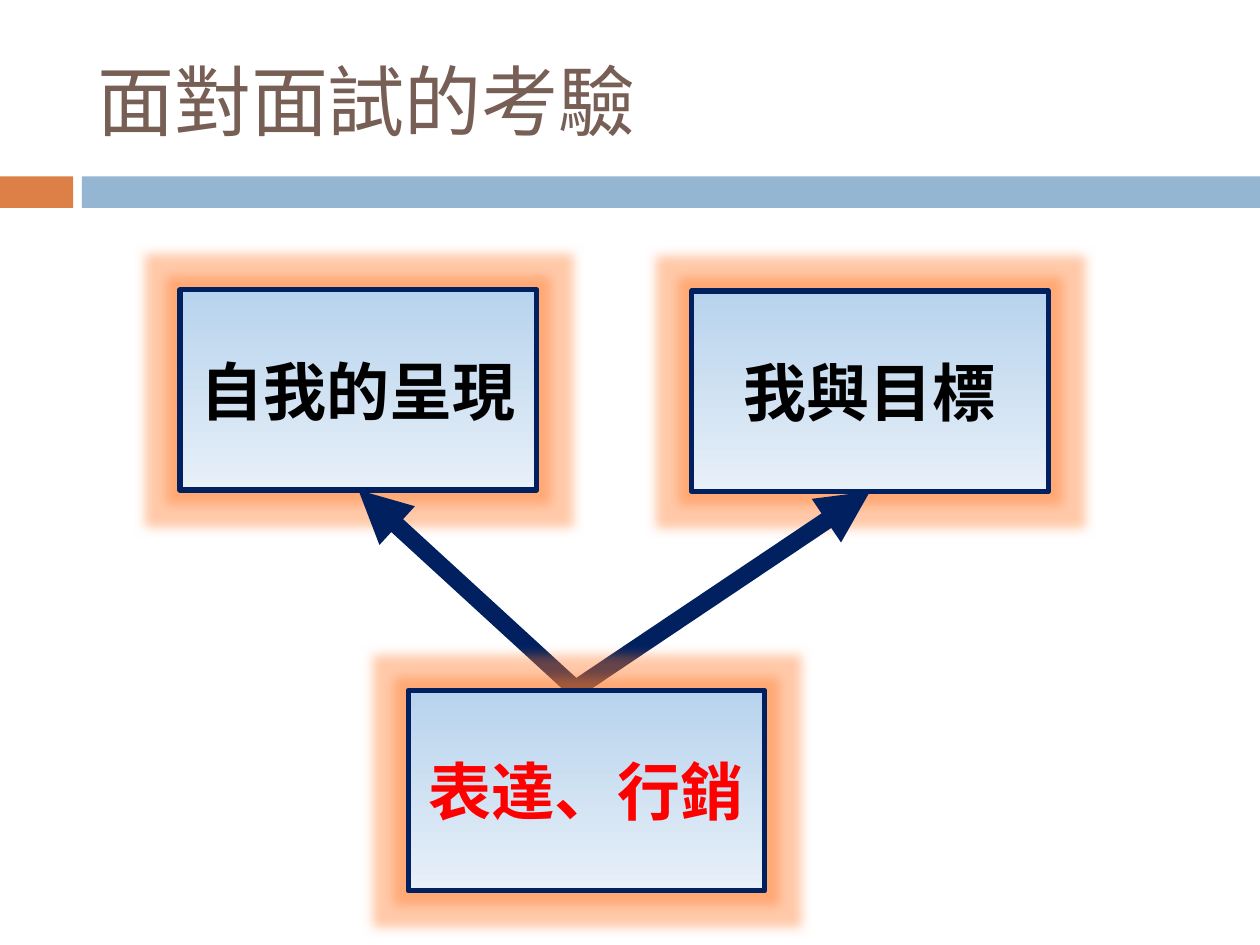
from lxml import etree
from pptx import Presentation
from pptx.dml.color import RGBColor
from pptx.enum.shapes import MSO_CONNECTOR, MSO_SHAPE
from pptx.enum.text import MSO_ANCHOR, MSO_AUTO_SIZE, PP_ALIGN
from pptx.oxml.ns import qn
from pptx.util import Inches, Pt

RECT = MSO_SHAPE.RECTANGLE
LINE = MSO_CONNECTOR.STRAIGHT
MIDDLE = MSO_ANCHOR.MIDDLE
LEFT, CENTER = PP_ALIGN.LEFT, PP_ALIGN.CENTER
NO_FIT = MSO_AUTO_SIZE.NONE
BOTTOM = 2

COLORS = {
    "orange": "DD8047", "blue": "94B6D2", "brown": "775F55",
    "navy": "002060", "top": "B7D3ED", "base": "E8F0F8",
    "glow": "FF7A28", "black": "000000", "red": "FF0000",
}
FORMATS = {
    "title": {"name": "Cabin", "size": Pt(44), "bold": False},
    "box": {"name": "Cabin", "size": Pt(36), "bold": True},
}
BOX_W, BOX_H = 28.3, 15.9
BAND_Y, BAND_H = 14, 2.5


def rgb(name):
    return RGBColor.from_string(COLORS[name])


class Deck:
    """Style and current slide; lengths are cells of a 100 by 75 grid."""

    def __init__(self):
        self.prs = Presentation()
        self.prs.slide_width, self.prs.slide_height = Inches(10), Inches(7.5)
        self.cell = self.prs.slide_width / 100
        self.slide = self.prs.slides.add_slide(self.prs.slide_layouts[5])

    def grid(self, *cells):
        return [round(c * self.cell) for c in cells]

    def label(self, shape, text, style, color, align):
        frame = shape.text_frame
        frame.text = text
        frame.word_wrap = True
        frame.auto_size = NO_FIT
        frame.vertical_anchor = MIDDLE
        par = frame.paragraphs[0]
        par.alignment = align
        font = par.runs[0].font
        for key, value in FORMATS[style].items():
            setattr(font, key, value)
        font.color.rgb = rgb(color)

    def title(self, text, *area):
        shape = self.slide.shapes.title
        shape.left, shape.top, shape.width, shape.height = self.grid(*area)
        self.label(shape, text, "title", "brown", LEFT)

    def band(self, x, width, color):
        shape = self.slide.shapes.add_shape(
            RECT, *self.grid(x, BAND_Y, width, BAND_H))
        shape.shadow.inherit = False
        shape.fill.solid()
        shape.fill.fore_color.rgb = rgb(color)
        shape.line.fill.background()

    def box(self, text, x, y, color="black"):
        shape = self.slide.shapes.add_shape(
            RECT, *self.grid(x, y, BOX_W, BOX_H))
        shape.shadow.inherit = False
        shape.fill.gradient()
        shape.fill.gradient_angle = 270
        for stop, name in zip(shape.fill.gradient_stops, ("top", "base")):
            stop.color.rgb = rgb(name)
        self.stroke(shape, 3)
        self.glow(shape)
        self.label(shape, text, "box", color, CENTER)
        return shape

    def stroke(self, shape, width):
        shape.line.color.rgb = rgb("navy")
        shape.line.width = Pt(width)

    def glow(self, shape):
        effects = shape._element.spPr.find(qn("a:effectLst"))
        halo = etree.SubElement(effects, qn("a:glow"), rad=str(Inches(0.18)))
        tint = etree.SubElement(halo, qn("a:srgbClr"), val=COLORS["glow"])
        etree.SubElement(tint, qn("a:alpha"), val="40000")

    def arrow(self, box, x, y):
        """Draw a line from a grid point up to an arrowhead under a box."""
        line = self.slide.shapes.add_connector(LINE, 0, 0, *self.grid(x, y))
        line.begin_connect(box, BOTTOM)
        self.stroke(line, 10)
        outline = line._element.spPr.find(qn("a:ln"))
        etree.SubElement(outline, qn("a:headEnd"), type="triangle")
        etree.SubElement(line._element.spPr, qn("a:effectLst"))


def main():
    deck = Deck()
    deck.band(0, 5.8, "orange")
    deck.band(6.5, 93.5, "blue")
    deck.title("面對面試的考驗", 6.7, 2.5, 89.2, 10.8)
    low = 54.8
    self_box = deck.box("自我的呈現", 14.3, 23)
    goal_box = deck.box("我與目標", 54.9, 23.1)
    deck.arrow(self_box, 45.8, low)
    deck.arrow(goal_box, 45.5, low)
    deck.box("表達、行銷", 32.4, low, "red")
    deck.prs.save("out.pptx")


if __name__ == "__main__":
    main()
